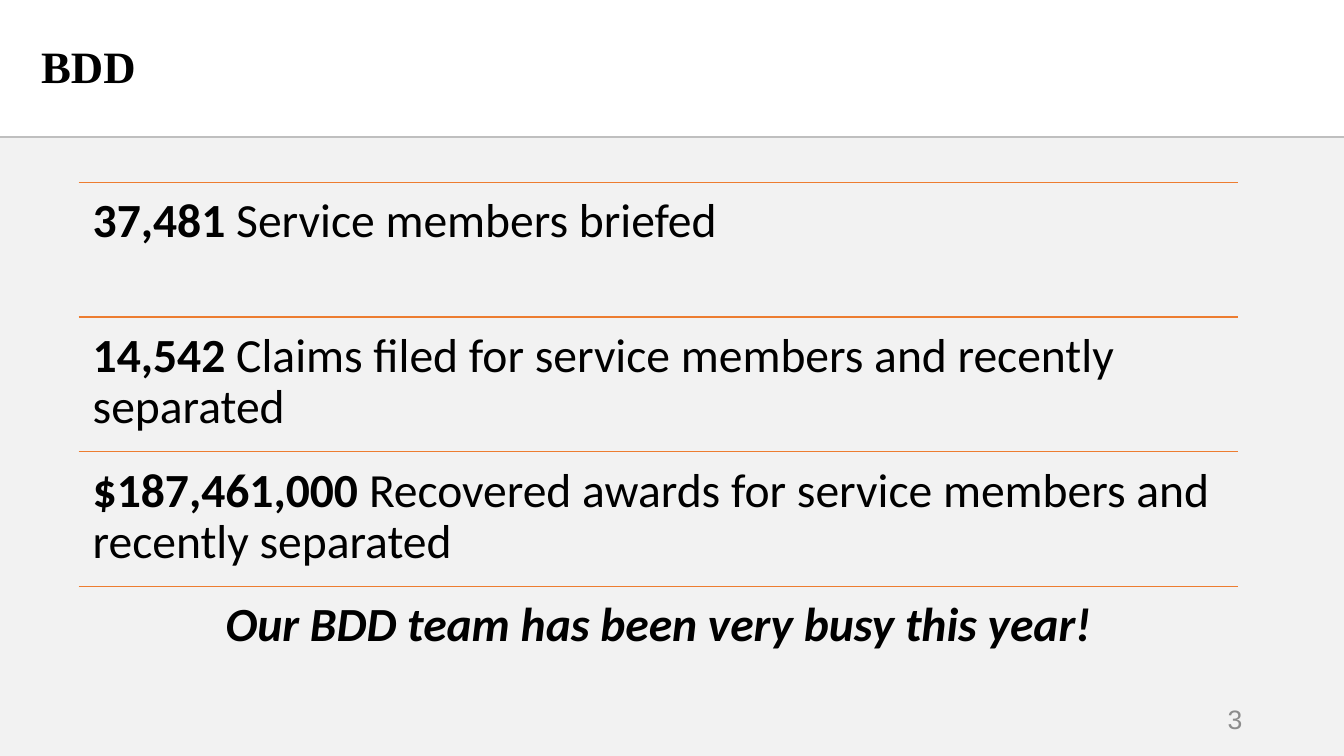
from lxml import etree
from pptx import Presentation
from pptx.dml.color import RGBColor
from pptx.enum.shapes import MSO_CONNECTOR, MSO_SHAPE
from pptx.enum.text import MSO_ANCHOR, PP_ALIGN
from pptx.oxml.ns import qn
from pptx.util import Inches, Pt

# Content
TITLE = "BDD"
PAGE_NUMBER = "3"
# Each row: bold lead, regular remainder
RESULTS = [
    ("37,481", " Service members briefed"),
    ("14,542", " Claims filed for service members and recently separated"),
    ("$187,461,000 ", "Recovered awards for service members and recently separated"),
]
CLOSING = "Our BDD team has been very busy this year!"

# Colours
BLACK = RGBColor(0x00, 0x00, 0x00)
PANEL_GREY = RGBColor(0xF2, 0xF2, 0xF2)
RULE_GREY = RGBColor(0xBF, 0xBF, 0xBF)
NUMBER_GREY = RGBColor(0x8C, 0x8C, 0x8C)
ORANGE = RGBColor(0xED, 0x7D, 0x31)

# Layout in inches
SLIDE_W, SLIDE_H = 13.33, 7.5
HEADER_H = 1.36
ROWS_LEFT, ROWS_TOP, ROWS_W = 0.78, 1.81, 11.5
ROW_STEP = 1.336
ROW_INSET = 0.14

prs = Presentation()
prs.slide_width, prs.slide_height = Inches(SLIDE_W), Inches(SLIDE_H)
slide = prs.slides.add_slide(prs.slide_layouts[6])


def add_rule(left, top, width, color, weight):
    rule = slide.shapes.add_connector(
        MSO_CONNECTOR.STRAIGHT, Inches(left), Inches(top), Inches(left + width), Inches(top))
    rule.line.color.rgb = color
    rule.line.width = Pt(weight)
    etree.SubElement(rule._element.spPr, qn("a:effectLst"))


def add_text(box, runs, font, size, color=BLACK, align=PP_ALIGN.LEFT,
             anchor=MSO_ANCHOR.MIDDLE, inset=None):
    """Add a one-paragraph box; runs are (text, bold, italic)."""
    frame = slide.shapes.add_textbox(*map(Inches, box)).text_frame
    frame.word_wrap = True
    frame.vertical_anchor = anchor
    if inset is not None:
        frame.margin_left = frame.margin_right = Inches(inset)
        frame.margin_top = frame.margin_bottom = Inches(inset)
    paragraph = frame.paragraphs[0]
    paragraph.alignment = align
    paragraph.line_spacing = 0.9
    for text, bold, italic in runs:
        run = paragraph.add_run()
        run.text = text
        run.font.name, run.font.size = font, Pt(size)
        run.font.bold, run.font.italic = bold, italic
        run.font.color.rgb = color


# Background panel and header rule
panel = slide.shapes.add_shape(
    MSO_SHAPE.RECTANGLE, 0, Inches(HEADER_H), Inches(SLIDE_W), Inches(SLIDE_H - HEADER_H))
panel.shadow.inherit = False
panel.fill.solid()
panel.fill.fore_color.rgb = PANEL_GREY
panel.line.fill.background()
add_rule(0, HEADER_H, SLIDE_W, RULE_GREY, 1.5)

# Page number and title
add_text((9.42, 6.95, 3, 0.4), [(PAGE_NUMBER, False, False)], "Arial", 19,
         NUMBER_GREY, PP_ALIGN.RIGHT)
add_text((0.31, 0.15, 9.24, 1.07), [(TITLE, True, False)], "Times New Roman", 32)

# Ruled rows: the results, then the closing line
rows = [([(lead, True, False), (rest, False, False)], PP_ALIGN.LEFT) for lead, rest in RESULTS]
rows.append(([(CLOSING, True, True)], PP_ALIGN.CENTER))
for index, (runs, align) in enumerate(rows):
    top = ROWS_TOP + index * ROW_STEP
    add_rule(ROWS_LEFT, top, ROWS_W, ORANGE, 1)
    add_text((ROWS_LEFT, top, ROWS_W, ROW_STEP), runs, "Calibri", 34,
             align=align, anchor=MSO_ANCHOR.TOP, inset=ROW_INSET)

prs.save("out.pptx")
